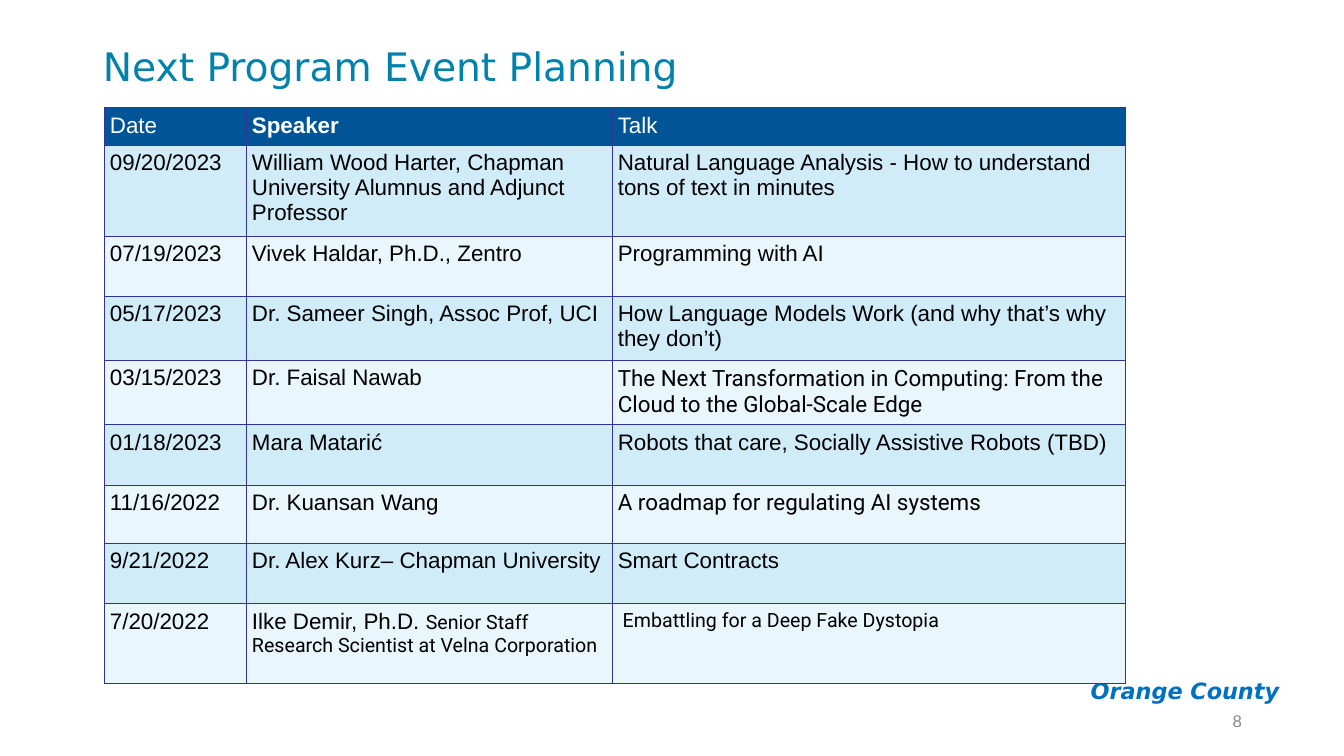
from lxml.etree import SubElement
from pptx import Presentation
from pptx.dml.color import RGBColor
from pptx.enum.text import MSO_ANCHOR, MSO_AUTO_SIZE, PP_ALIGN
from pptx.oxml.ns import qn
from pptx.util import Cm, Pt

COLORS = {
    "title": "0182AC",
    "chapter": "0070C0",
    "number": "888888",
    "header": "015596",
    "header_text": "FFFFFF",
    "text": "000000",
    "odd_row": "D1ECF9",
    "even_row": "E9F6FC",
    "border": "333399",
}
BODY, HEADING, ACCENT = "Arial", "DejaVu Sans", "Roboto"

# A cell is plain text, or a list of (text, font, size) spans.
HEADERS = ["Date", "Speaker", "Talk"]
EVENTS = [
    ["09/20/2023", "William Wood Harter, Chapman University Alumnus and Adjunct Professor",
     "Natural Language Analysis - How to understand tons of text in minutes"],
    ["07/19/2023", "Vivek Haldar, Ph.D., Zentro", "Programming with AI"],
    ["05/17/2023", "Dr. Sameer Singh, Assoc Prof, UCI",
     "How Language Models Work (and why that’s why they don’t)"],
    ["03/15/2023", "Dr. Faisal Nawab",
     [("The Next Transformation in Computing: From the Cloud to the Global-Scale Edge",
       ACCENT, 16)]],
    ["01/18/2023", "Mara Matarić", "Robots that care, Socially Assistive Robots (TBD)"],
    ["11/16/2022", "Dr. Kuansan Wang", [("A roadmap for regulating AI systems", ACCENT, 16)]],
    ["9/21/2022", "Dr. Alex Kurz– Chapman University", "Smart Contracts"],
    ["7/20/2022",
     [("Ilke Demir, Ph.D. ", BODY, 16),
      ("Senior Staff Research Scientist at Velna Corporation", ACCENT, 14)],
     [(" Embattling for a Deep Fake Dystopia", ACCENT, 14)]],
]
COLUMN_WIDTHS = [3.58, 9.22, 12.93]
ROW_HEIGHTS = [0.94, 2.16, 1.52, 1.52, 1.52, 1.52, 1.47, 1.52, 2.01]


def rgb(name):
    return RGBColor.from_string(COLORS[name])


def add_span(para, text, font, size, color, bold=False, italic=False):
    span = para.add_run()
    span.text = text
    span.font.name = font
    span.font.size = Pt(size)
    span.font.bold = bold
    span.font.italic = italic
    span.font.color.rgb = rgb(color)


def place_title(page, box):
    title = page.shapes.title
    title.left, title.top, title.width, title.height = map(Cm, box)
    frame = title.text_frame
    frame.auto_size = MSO_AUTO_SIZE.NONE
    frame.vertical_anchor = MSO_ANCHOR.MIDDLE
    para = frame.paragraphs[0]
    para.alignment = PP_ALIGN.LEFT
    para.line_spacing = 0.9
    add_span(para, "Next Program Event Planning", HEADING, 28, "title")


def add_right_label(page, box, anchor, *span, **style):
    frame = page.shapes.add_textbox(*map(Cm, box)).text_frame
    frame.word_wrap = True
    frame.vertical_anchor = anchor
    frame.margin_top = frame.margin_bottom = Cm(0.25)
    para = frame.paragraphs[0]
    para.alignment = PP_ALIGN.RIGHT
    add_span(para, *span, **style)


def set_borders(cell):
    """Draw a thin line on all four sides; call before the cell is filled."""
    properties = cell._tc.get_or_add_tcPr()
    for side in ("a:lnL", "a:lnR", "a:lnT", "a:lnB"):
        line = SubElement(properties, qn(side), w=str(Pt(0.75)))
        fill = SubElement(line, qn("a:solidFill"))
        SubElement(fill, qn("a:srgbClr"), val=COLORS["border"])


def fill_cell(cell, content, fill, color, bold):
    cell.margin_left = cell.margin_right = Cm(0.13)
    cell.margin_top = cell.margin_bottom = Cm(0.13)
    set_borders(cell)
    cell.fill.solid()
    cell.fill.fore_color.rgb = rgb(fill)
    spans = [(content, BODY, 16)] if isinstance(content, str) else content
    for text, font, size in spans:
        add_span(cell.text_frame.paragraphs[0], text, font, size, color, bold)


def add_events(page, left, top):
    rows = [HEADERS] + EVENTS
    table = page.shapes.add_table(
        len(rows), len(HEADERS), Cm(left), Cm(top),
        Cm(sum(COLUMN_WIDTHS)), Cm(sum(ROW_HEIGHTS))).table
    for column, width in zip(table.columns, COLUMN_WIDTHS):
        column.width = Cm(width)
    for row, height in zip(table.rows, ROW_HEIGHTS):
        row.height = Cm(height)
    for r, contents in enumerate(rows):
        band = "odd_row" if r % 2 else "even_row"
        fill, color = (band, "text") if r else ("header", "header_text")
        for c, content in enumerate(contents):
            fill_cell(table.cell(r, c), content, fill, color, bold=content == "Speaker")


def main():
    deck = Presentation()
    deck.slide_width, deck.slide_height = Cm(33.87), Cm(19.05)
    page = deck.slides.add_slide(deck.slide_layouts[5])
    add_right_label(page, (26.7, 16.81, 5.79, 1.19), MSO_ANCHOR.TOP,
                    "Orange County", HEADING, 16, "chapter", bold=True, italic=True)
    place_title(page, (2.34, 0.74, 29.21, 1.98))
    add_right_label(page, (23.93, 17.65, 7.62, 1.02), MSO_ANCHOR.MIDDLE,
                    "8", BODY, 12, "number")
    add_events(page, 2.64, 2.72)
    deck.save("out.pptx")


if __name__ == "__main__":
    main()
